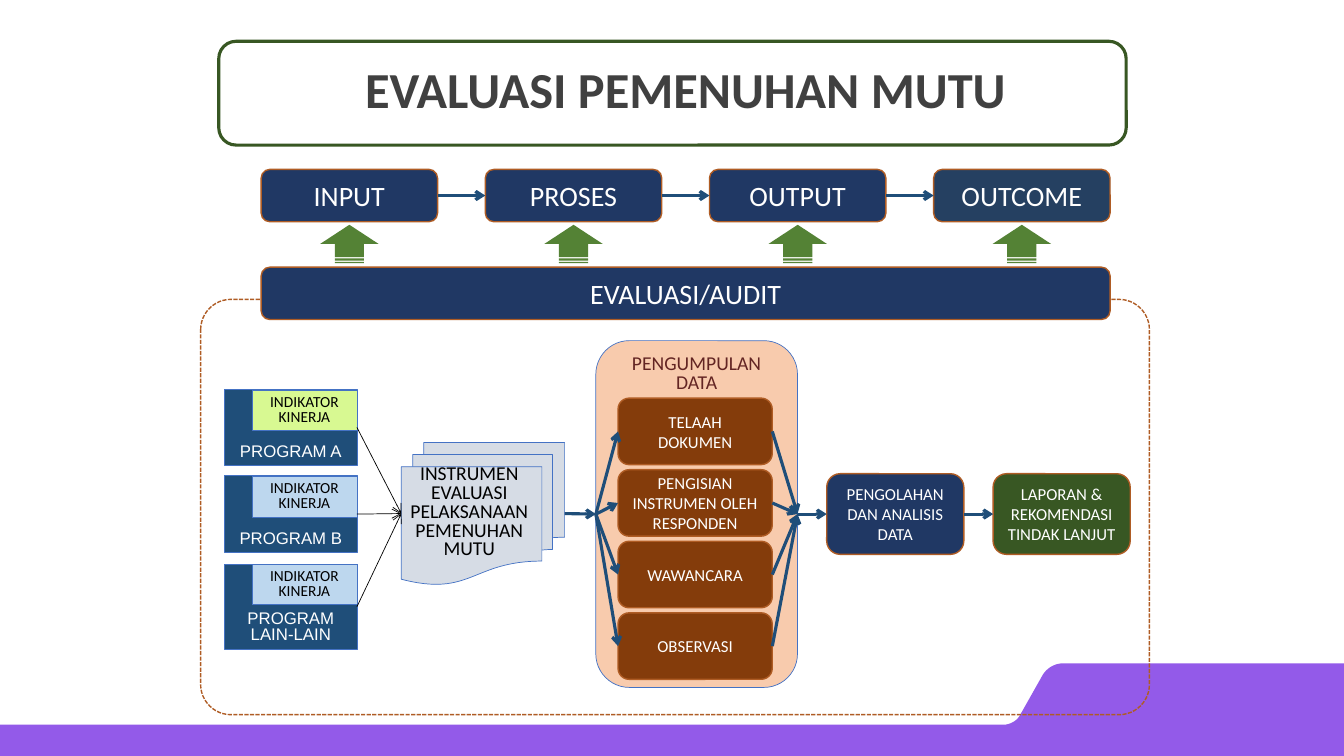
from dataclasses import dataclass

from lxml.etree import SubElement
from pptx import Presentation
from pptx.dml.color import RGBColor
from pptx.enum.dml import MSO_LINE
from pptx.enum.shapes import MSO_CONNECTOR, MSO_SHAPE
from pptx.enum.text import MSO_ANCHOR, PP_ALIGN
from pptx.oxml.ns import qn
from pptx.util import Inches, Pt

COLORS = {
    "purple": "935AE9", "orange": "AF5C24", "heading": "404040", "peach": "F8CBAD",
    "border": "4472C4", "maroon": "632523", "brown": "843C0B", "navy": "203864",
    "slate": "254061", "ocean": "1F4E79", "forest": "385723", "green": "548235",
    "gray": "D6DCE5", "lime": "D8F992", "sky": "BDD7EE", "white": "FFFFFF", "black": "000000",
}
LEFT, RIGHT = 1, 3


@dataclass
class Box:
    left: float
    top: float
    width: float
    height: float
    text: str = ""
    fill: str | None = None
    line: str | None = "orange"
    line_width: float = 1
    kind: MSO_SHAPE = MSO_SHAPE.ROUNDED_RECTANGLE
    size: float = 12
    font: str = "Calibri"
    color: str = "white"
    bold: bool = False
    spacing: float = 1
    anchor: MSO_ANCHOR = MSO_ANCHOR.MIDDLE


@dataclass
class Program:
    text: str
    top: float
    height: float
    indicator_top: float
    indicator_fill: str


def rgb(name: str) -> RGBColor:
    return RGBColor.from_string(COLORS[name])


def write_text(shape, box: Box) -> None:
    frame = shape.text_frame
    frame.word_wrap = True
    frame.vertical_anchor = box.anchor
    frame.text = box.text
    for paragraph in frame.paragraphs:
        paragraph.alignment = PP_ALIGN.CENTER
        paragraph.line_spacing = box.spacing
        paragraph.font.size = Pt(box.size)
        paragraph.font.name = box.font
        paragraph.font.bold = box.bold
        paragraph.font.color.rgb = rgb(box.color)


def draw_box(slide, box: Box):
    shape = slide.shapes.add_shape(
        box.kind, Inches(box.left), Inches(box.top), Inches(box.width), Inches(box.height))
    shape.shadow.inherit = False
    if box.fill:
        shape.fill.solid()
        shape.fill.fore_color.rgb = rgb(box.fill)
    else:
        shape.fill.background()
    if box.line:
        shape.line.color.rgb = rgb(box.line)
        shape.line.width = Pt(box.line_width)
    else:
        shape.line.fill.background()
    if box.text:
        write_text(shape, box)
    return shape


def draw_label(slide, box: Box) -> None:
    write_text(slide.shapes.add_textbox(
        Inches(box.left), Inches(box.top), Inches(box.width), Inches(box.height)), box)


def draw_arrow(slide, source, source_side: int, target, target_side: int,
               color: str = "ocean", width: float = 2.25) -> None:
    connector = slide.shapes.add_connector(MSO_CONNECTOR.STRAIGHT, 0, 0, 0, 0)
    connector.begin_connect(source, source_side)
    connector.end_connect(target, target_side)
    connector.line.color.rgb = rgb(color)
    connector.line.width = Pt(width)
    SubElement(connector.line._get_or_add_ln(), qn("a:tailEnd"), type="arrow")
    SubElement(connector._element.spPr, qn("a:effectLst"))


def curve(points: list[tuple[float, float]], steps: int = 12) -> list[tuple[float, float]]:
    result = []
    for step in range(1, steps + 1):
        t = step / steps
        weights = ((1 - t) ** 3, 3 * t * (1 - t) ** 2, 3 * t * t * (1 - t), t ** 3)
        result.append(tuple(sum(w * point[axis] for w, point in zip(weights, points))
                            for axis in (0, 1)))
    return result


def draw_footer_band(slide) -> None:
    outline = [
        *curve([(10.55, 6.58), (10.46, 6.58), (10.38, 6.63), (10.34, 6.7)]),
        *curve([(10.12, 7.09), (10.09, 7.15), (10.02, 7.19), (9.95, 7.19)]),
        (0, 7.19), (0, 7.5), (13.33, 7.5), (13.33, 6.58),
    ]
    outline.insert(12, (10.12, 7.09))
    builder = slide.shapes.build_freeform(Inches(10.55), Inches(6.58))
    builder.add_line_segments([(Inches(x), Inches(y)) for x, y in outline], close=True)
    band = builder.convert_to_shape()
    band.shadow.inherit = False
    band.fill.solid()
    band.fill.fore_color.rgb = rgb("purple")
    band.line.fill.background()


def draw_stages(slide) -> None:
    first_left, last_left, width = 2.59, 9.26, 1.75
    names = ["INPUT", "PROSES", "OUTPUT", "OUTCOME"]
    pitch = (last_left - first_left) / (len(names) - 1)
    draw_box(slide, Box(first_left, 2.65, 8.42, 0.52, "EVALUASI/AUDIT", "navy", size=20))
    previous = None
    for index, name in enumerate(names):
        left = first_left + index * pitch
        fill = "slate" if name == "OUTCOME" else "navy"
        stage = draw_box(slide, Box(left, 1.68, width, 0.52, name, fill, size=20))
        up_arrow = draw_box(slide, Box(left + (width - 0.38) / 2, 2.13, 0.38, 0.58, fill="green",
                                       line=None, kind=MSO_SHAPE.STRIPED_RIGHT_ARROW))
        up_arrow.rotation = 270
        if previous is not None:
            draw_arrow(slide, previous, RIGHT, stage, LEFT)
        previous = stage


def draw_programs(slide, instrument) -> None:
    programs = [
        Program("PROGRAM A", 3.86, 0.76, 3.87, "lime"),
        Program("PROGRAM B", 4.72, 0.76, 4.73, "sky"),
        Program("PROGRAM\nLAIN-LAIN", 5.6, 0.84, 5.6, "sky"),
    ]
    for program in programs:
        shape = draw_box(slide, Box(
            2.23, program.top, 1.31, program.height, program.text, "ocean", "border", 0.5,
            MSO_SHAPE.RECTANGLE, font="Arial", spacing=0.8, anchor=MSO_ANCHOR.BOTTOM))
        draw_box(slide, Box(
            2.5, program.indicator_top, 1.04, 0.4, "INDIKATOR KINERJA", program.indicator_fill,
            "border", 0.5, MSO_SHAPE.RECTANGLE, size=11, color="black", spacing=0.8))
        draw_arrow(slide, shape, RIGHT, instrument, LEFT, "black", 0.5)


def draw_collection(slide):
    panel = draw_box(slide, Box(5.91, 3.38, 2, 3.44, "PENGUMPULAN DATA", "peach", "border", 0.5,
                                size=14, color="maroon", spacing=0.8, anchor=MSO_ANCHOR.TOP))
    methods = ["TELAAH DOKUMEN", "PENGISIAN INSTRUMEN OLEH RESPONDEN", "WAWANCARA", "OBSERVASI"]
    for index, name in enumerate(methods):
        method = draw_box(slide, Box(6.13, 3.95 + index * 0.71, 1.53, 0.66, name, "brown"))
        draw_arrow(slide, panel, LEFT, method, LEFT)
        draw_arrow(slide, method, RIGHT, panel, RIGHT)
    return panel


def main() -> None:
    presentation = Presentation()
    presentation.slide_width = Inches(13.33)
    presentation.slide_height = Inches(7.5)
    slide = presentation.slides.add_slide(presentation.slide_layouts[6])

    draw_footer_band(slide)
    frame = draw_box(slide, Box(1.99, 2.97, 9.41, 4.12))
    frame.adjustments[0] = 0.073
    frame.line.dash_style = MSO_LINE.SQUARE_DOT
    draw_box(slide, Box(2.17, 0.41, 9, 1.03, line="forest", line_width=2.25))
    draw_label(slide, Box(1.05, 0.19, 11.5, 1.45, "EVALUASI PEMENUHAN MUTU", size=36,
                          color="heading", bold=True, spacing=0.9))
    draw_stages(slide)

    instrument = draw_box(slide, Box(3.98, 4.39, 1.62, 1.41, "", "gray", "border", 0.5,
                                     MSO_SHAPE.FLOWCHART_MULTIDOCUMENT))
    draw_label(slide, Box(3.96, 4.57, 1.39, 1.05,
                          "INSTRUMEN\nEVALUASI PELAKSANAAN PEMENUHAN MUTU", size=14,
                          color="black", spacing=0.8, anchor=MSO_ANCHOR.TOP))
    draw_programs(slide, instrument)
    panel = draw_collection(slide)
    analysis = draw_box(slide, Box(8.2, 4.7, 1.36, 0.8, "PENGOLAHAN DAN ANALISIS DATA", "navy"))
    report = draw_box(slide, Box(9.85, 4.7, 1.36, 0.8,
                                 "LAPORAN & REKOMENDASI TINDAK LANJUT", "forest"))
    flow = [instrument, panel, analysis, report]
    for source, target in zip(flow, flow[1:]):
        draw_arrow(slide, source, RIGHT, target, LEFT)

    presentation.save("out.pptx")


if __name__ == "__main__":
    main()
